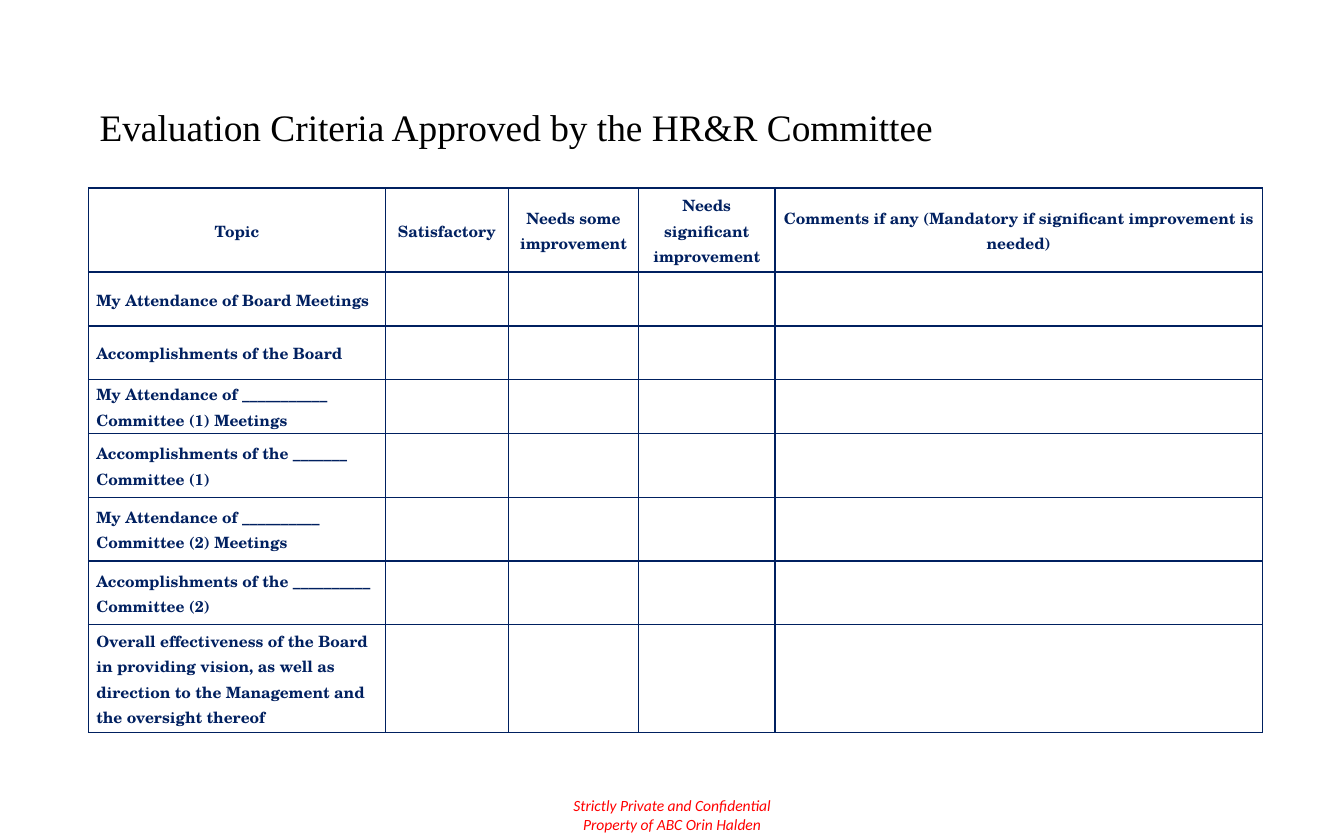
"""Build the board evaluation criteria slide."""
from dataclasses import dataclass

from lxml import etree
from pptx import Presentation
from pptx.dml.color import RGBColor
from pptx.enum.text import MSO_ANCHOR, PP_ALIGN
from pptx.oxml.ns import qn
from pptx.util import Inches, Pt

LEFT, CENTER = PP_ALIGN.LEFT, PP_ALIGN.CENTER
MIDDLE = MSO_ANCHOR.MIDDLE
NAVY = RGBColor(0x00, 0x20, 0x60)
RED = RGBColor(0xFF, 0x00, 0x00)
BLACK = RGBColor(0x00, 0x00, 0x00)

WIDTH, HEIGHT = Inches(12), Inches(7.5)
GRID_COLS, GRID_ROWS = 1200, 750


@dataclass(frozen=True)
class Box:
    """A rectangle in grid columns and rows."""
    col: int
    row: int
    cols: int
    rows: int

    def emu(self) -> tuple:
        return (across(self.col), down(self.row),
                across(self.cols), down(self.rows))


@dataclass(frozen=True)
class Criterion:
    """One topic to evaluate and the height of its row."""
    topic: str
    rows: int


HEADINGS = {
    "Topic": 265,
    "Satisfactory": 110,
    "Needs some improvement": 116,
    "Needs significant improvement": 122,
    "Comments if any (Mandatory if significant improvement is needed)": 435,
}
HEADING_ROWS = 75
CRITERIA = [
    Criterion("My Attendance of Board Meetings", 48),
    Criterion("Accomplishments of the Board", 48),
    Criterion("My Attendance of ___________ Committee (1) Meetings", 48),
    Criterion("Accomplishments of the _______ Committee (1)", 57),
    Criterion("My Attendance of __________ Committee (2) Meetings", 57),
    Criterion("Accomplishments of the __________ Committee (2)", 57),
    Criterion("Overall effectiveness of the Board in providing vision, as well as "
              "direction to the Management and the oversight thereof", 96),
]


def across(cols: int) -> int:
    return WIDTH * cols // GRID_COLS


def down(rows: int) -> int:
    return HEIGHT * rows // GRID_ROWS


def write(tf, *lines: str, font: str, size: float, color: RGBColor, align=LEFT,
          spacing: float = 1.0, bold: bool = False, italic: bool = False) -> None:
    for i, line in enumerate(lines):
        p = tf.add_paragraph() if i else tf.paragraphs[0]
        p.alignment, p.line_spacing = align, spacing
        r = p.add_run()
        r.text = line
        r.font.name, r.font.size = font, Pt(size)
        r.font.bold, r.font.italic = bold, italic
        r.font.color.rgb = color


def add_text(s, box: Box, *lines: str, wrap: bool = True, **style) -> None:
    tf = s.shapes.add_textbox(*box.emu()).text_frame
    tf.word_wrap = wrap
    write(tf, *lines, **style)


def frame_cell(cell) -> None:
    tc_pr = cell._tc.get_or_add_tcPr()
    for side in ("lnL", "lnR", "lnT", "lnB"):
        ln = etree.SubElement(tc_pr, qn(f"a:{side}"), w=str(Pt(1)))
        fill = etree.SubElement(ln, qn("a:solidFill"))
        etree.SubElement(fill, qn("a:srgbClr"), val=str(NAVY))
    cell.fill.background()
    cell.vertical_anchor = MIDDLE
    cell.margin_left = cell.margin_right = across(7)
    cell.margin_top = cell.margin_bottom = 0


def add_criteria_table(s, col: int, row: int) -> None:
    widths = list(HEADINGS.values())
    heights = [HEADING_ROWS] + [c.rows for c in CRITERIA]
    box = Box(col, row, sum(widths), sum(heights))
    table = s.shapes.add_table(len(heights), len(widths), *box.emu()).table
    table.first_row = table.horz_banding = False
    for column, width in zip(table.columns, widths):
        column.width = across(width)
    for table_row, height in zip(table.rows, heights):
        table_row.height = down(height)
    for cell in table.iter_cells():
        frame_cell(cell)
    style = dict(font="TeX Gyre Schola", size=10, color=NAVY, bold=True, spacing=1.07)
    for i, heading in enumerate(HEADINGS):
        write(table.cell(0, i).text_frame, heading, align=CENTER, **style)
    for i, criterion in enumerate(CRITERIA, 1):
        write(table.cell(i, 0).text_frame, criterion.topic, **style)


def main() -> None:
    prs = Presentation()
    prs.slide_width, prs.slide_height = WIDTH, HEIGHT
    s = prs.slides.add_slide(prs.slide_layouts[6])
    add_text(s, Box(501, 706, 198, 44), "Strictly Private and Confidential",
             "Property of ABC Orin Halden", wrap=False, font="Calibri", size=10,
             color=RED, align=CENTER, italic=True)
    add_criteria_table(s, 79, 168)
    add_text(s, Box(79, 93, 931, 110),
             "Evaluation Criteria Approved by the HR&R Committee",
             font="Times New Roman", size=24, color=BLACK, spacing=0.9)
    prs.save("out.pptx")


if __name__ == "__main__":
    main()
